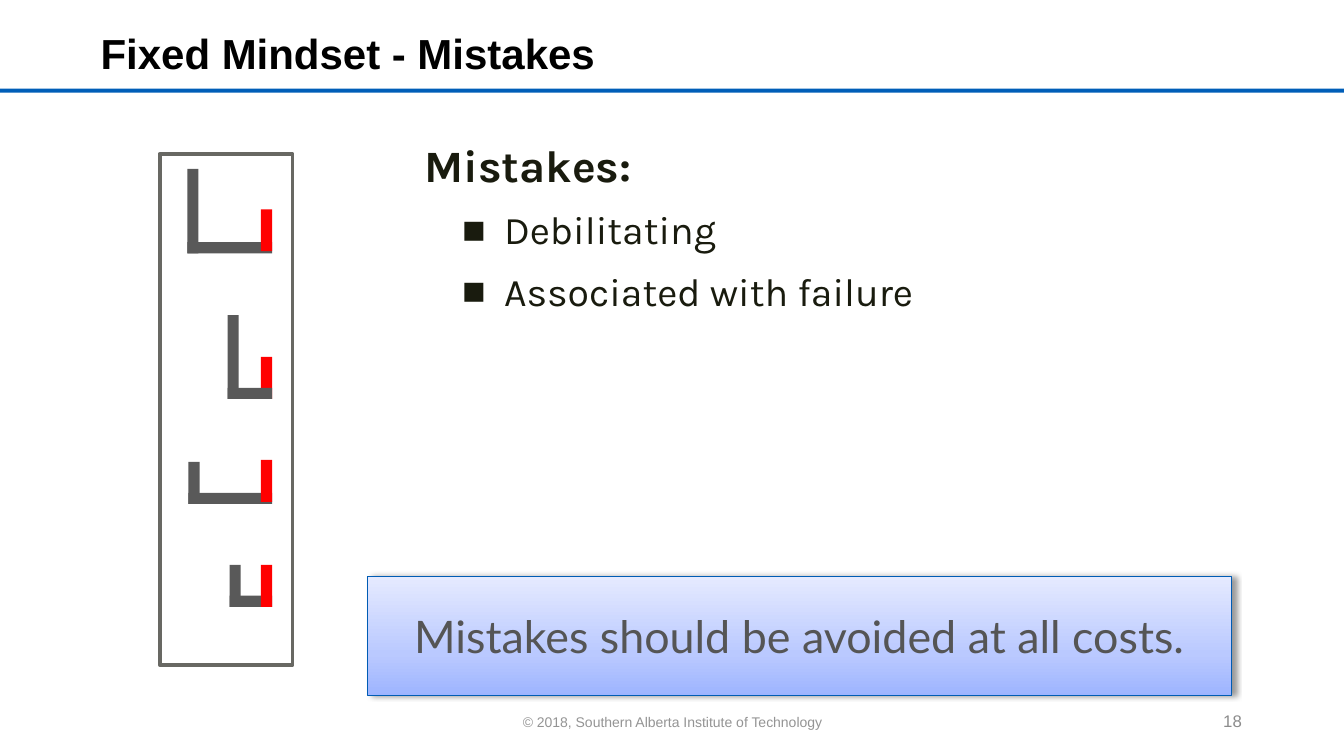
import pptx
import pptx.util
import pptx.dml.color
import pptx.enum.shapes
import pptx.enum.text
import pptx.oxml
from pptx.oxml.ns import nsdecls, qn

Pt = pptx.util.Pt
ALIGN = pptx.enum.text.PP_ALIGN
ANCHOR = pptx.enum.text.MSO_ANCHOR
RECT = pptx.enum.shapes.MSO_SHAPE.RECTANGLE


def rgb(value):
    return pptx.dml.color.RGBColor.from_string(value)


def xml(text):
    return pptx.oxml.parse_xml(text.replace(">", f" {nsdecls('a')}>", 1))


class Slide:
    gray = "595959"
    red = "FF0000"
    ink = "191B0E"
    bar = 8
    letter_right = 194.4

    def __init__(self, prs):
        self.s = prs.slides.add_slide(prs.slide_layouts[6])

    def rect(self, box, fill=None, line=None, width=1, parent=None):
        shapes = (parent or self.s).shapes
        sp = shapes.add_shape(RECT, *[Pt(v) for v in box])
        sp.shadow.inherit = False
        if fill:
            sp.fill.solid()
            sp.fill.fore_color.rgb = rgb(fill)
        else:
            sp.fill.background()
        if line:
            sp.line.color.rgb = rgb(line)
            sp.line.width = Pt(width)
        else:
            sp.line.fill.background()
        return sp

    def style(self, p, font, size, color, bold=False, align=ALIGN.LEFT):
        p.alignment = align
        for r in p.runs:
            r.font.name = font
            r.font.size = Pt(size)
            r.font.bold = bold
            r.font.color.rgb = rgb(color)

    def box(self, box, anchor=ANCHOR.TOP):
        tf = self.s.shapes.add_textbox(*[Pt(v) for v in box]).text_frame
        tf.word_wrap = True
        tf.vertical_anchor = anchor
        return tf

    def label(self, box, text, font, size, color, bold=False, align=ALIGN.LEFT, anchor=ANCHOR.TOP):
        tf = self.box(box, anchor)
        tf.text = text
        self.style(tf.paragraphs[0], font, size, color, bold, align)
        return tf

    def bullets(self, box, heading, items):
        tf = self.box(box)
        tf.text = heading
        p = tf.paragraphs[0]
        self.style(p, "Karla", 32, self.ink, True)
        for item in items:
            p = tf.add_paragraph()
            p.text = item
            p.level = 1
            pPr = p._p.get_or_add_pPr()
            pPr.set("marL", str(Pt(57)))
            pPr.set("indent", str(Pt(-30)))
            pPr.append(xml('<a:buFont typeface="Arial"/>'.replace("/>", "></a:buFont>")))
            pPr.append(xml('<a:buChar char="■"></a:buChar>'))
            p.space_before = Pt(10)
            self.style(p, "Karla", 28, self.ink)
        for p in tf.paragraphs:
            p.line_spacing = 0.94
            p.space_after = Pt(2)

    def banner(self, box, text, stops):
        sp = self.rect(box, line="005CB4", width=0.75)
        sp.fill.gradient()
        sp.fill.gradient_angle = 90
        spPr = sp._element.spPr
        gs_list = spPr.find(".//" + qn("a:gsLst"))
        for gs in list(gs_list):
            gs_list.remove(gs)
        for pos, color in stops:
            gs_list.append(xml(f'<a:gs pos="{pos * 1000}"><a:srgbClr val="{color}"/></a:gs>'))
        spPr.find(qn("a:effectLst")).append(xml(
            f'<a:outerShdw blurRad="{Pt(4)}" dist="{Pt(3)}" dir="0" rotWithShape="0">'
            '<a:srgbClr val="000000"><a:alpha val="40000"/></a:srgbClr></a:outerShdw>'))
        tf = sp.text_frame
        tf.word_wrap = True
        tf.vertical_anchor = ANCHOR.MIDDLE
        tf.text = text
        self.style(tf.paragraphs[0], "Lato", 32, "555555", align=ALIGN.CENTER)

    def letter(self, left, foot, height, red_foot, order):
        group = self.s.shapes.add_group_shape()
        right, bar, red_height = self.letter_right, self.bar, 30
        parts = {
            "base": ((left, foot - bar, right - left, bar), self.gray),
            "stem": ((left, foot - height, bar, height), self.gray),
            "tip": ((right - bar, red_foot - red_height, bar, red_height), self.red),
        }
        for name in order:
            box, fill = parts[name]
            self.rect(box, fill, parent=group)


def main():
    prs = pptx.Presentation()
    prs.slide_width, prs.slide_height = Pt(960), Pt(540)
    s = Slide(prs)

    s.rect((0, 63.4, 960, 2.9), "005EB8")
    s.label((319, 506, 322.5, 19.5), "© 2018, Southern Alberta Institute of Technology",
            "Arial", 10, "949494", align=ALIGN.CENTER)
    title = s.label((64.8, 12.2, 704, 54), "Fixed Mindset - Mistakes", "Arial", 30, "000000", True)
    title.margin_top = Pt(7.2)
    s.bullets((296, 98, 594.7, 275), "Mistakes:", ["Debilitating", "Associated with failure"])
    s.label((678.2, 500.4, 216, 28.8), "18", "Arial", 12, "8C8C8C",
            align=ALIGN.RIGHT, anchor=ANCHOR.MIDDLE)

    s.rect((114, 110, 95, 365), line="686863", width=2.75)
    s.banner((262.6, 411.8, 617, 85), "Mistakes should be avoided at all costs.",
             [(0, "9DB4FF"), (35, "BAC9FF"), (100, "E5EAFF")])

    base_first = ("base", "stem", "tip")
    base_last = ("stem", "tip", "base")
    for letter in [
        (133.8, 181, 60.4, 179.5, base_first),
        (162.6, 285, 60, 285, base_last),
        (134.6, 360, 30, 358.5, base_first),
        (164, 433.5, 30, 433.5, base_first),
    ]:
        s.letter(*letter)

    prs.save("out.pptx")


if __name__ == "__main__":
    main()
